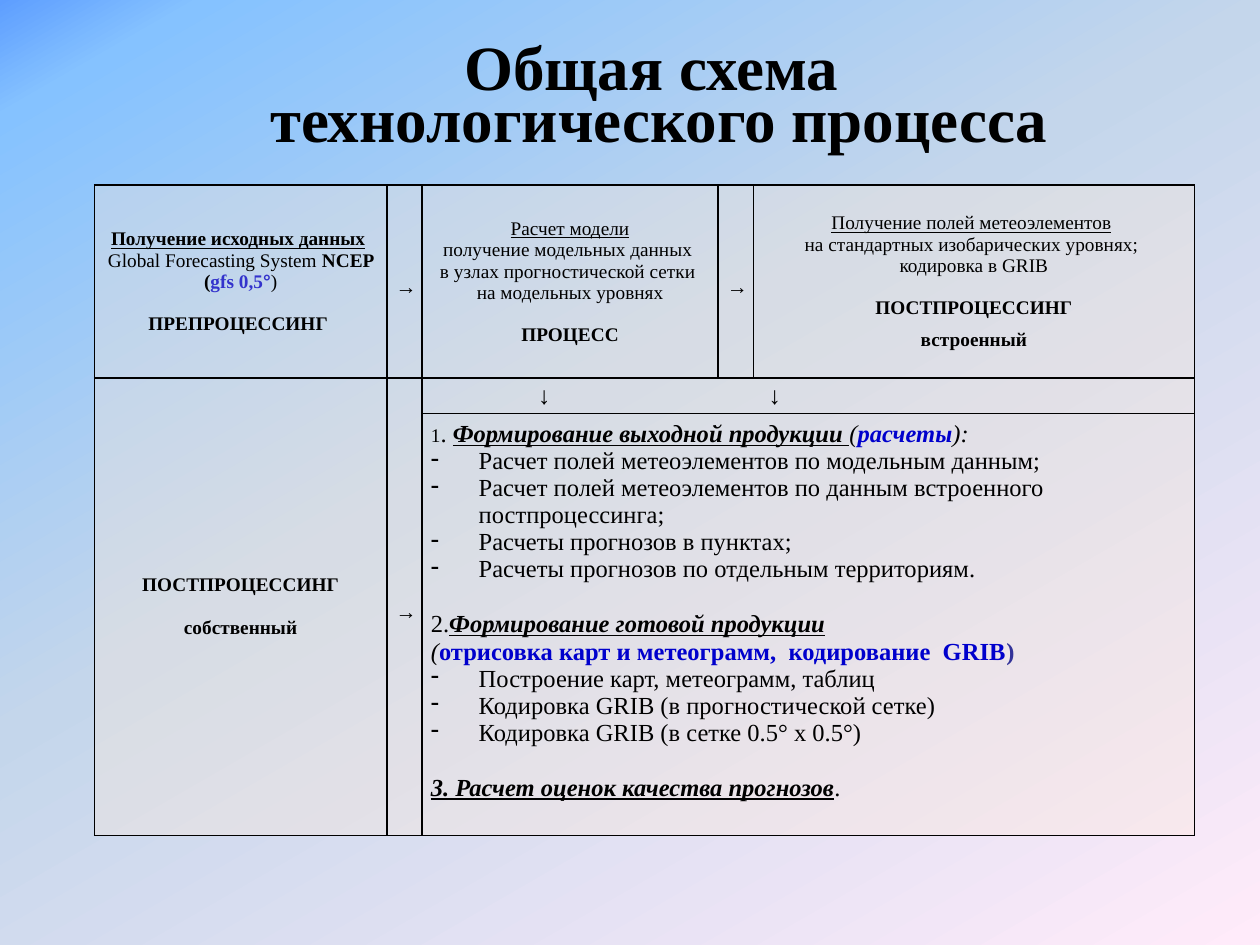
from copy import deepcopy
from lxml import etree
from pptx import Presentation
from pptx.dml.color import RGBColor
from pptx.enum.text import MSO_ANCHOR, PP_ALIGN
from pptx.oxml import parse_xml
from pptx.oxml.ns import nsdecls, qn
from pptx.util import Inches, Pt

MID = MSO_ANCHOR.MIDDLE
MIX = PP_ALIGN.CENTER
JUST = PP_ALIGN.JUSTIFY
LEFT = PP_ALIGN.LEFT
SERIF = "Times New Roman"
SANS = "Arial"
HUES = {"black": "000000", "blue": "0000CC", "soft": "3333CC", "navy": "333399", "cell": "FDEADA"}
STOPS = [(0, "5E9EFF"), (0.07, "85C2FF"), (0.44, "C4D6EB"), (1, "FFEBFA")]


def add_run(para, text, size, flags="", hue="black", face=SERIF):
    run = para.add_run()
    run.text = text
    look = {"size": Pt(size), "name": face, "bold": "b" in flags,
            "italic": "i" in flags, "underline": "u" in flags}
    for key, val in look.items():
        setattr(run.font, key, val)
    run.font.color.rgb = RGBColor.from_string(HUES[hue])


def add_text(frame, paras):
    for num, (form, runs) in enumerate(paras):
        para = frame.paragraphs[0] if num == 0 else frame.add_paragraph()
        props = para._p.get_or_add_pPr()
        form = dict(form)
        for key, val in form.pop("attrs", {}).items():
            props.set(key, str(val))
        for part in form.pop("parts", []):
            props.append(parse_xml(part))
        for key, val in form.items():
            setattr(para, key, val)
        for run in runs:
            add_run(para, *run)


deck = Presentation()
deck.slide_width, deck.slide_height = Inches(10), Inches(7.5)
slide = deck.slides.add_slide(deck.slide_layouts[5])

back = slide.background.fill
back.gradient()
back.gradient_angle = 300
marks = slide._element.find(".//" + qn("a:gsLst"))
for _ in range(2):
    marks.append(deepcopy(marks[0]))
for stop, (place, hue) in zip(back.gradient_stops, STOPS):
    stop.position = place
    stop.color.rgb = RGBColor.from_string(hue)

title = slide.shapes.title
spot = {"left": 0.59, "top": 0.34, "width": 8.9, "height": 0.95}
for key, val in spot.items():
    setattr(title, key, Inches(val))
title.text_frame.word_wrap = True
title.text_frame.vertical_anchor = MID
head = {"alignment": MIX, "line_spacing": Pt(30), "attrs": {"marL": 0, "indent": Inches(0.38)}}
add_text(title.text_frame, [
    (head, [("Общая схема ", 36, "b")]),
    (head, [("технологического процесса", 36, "b")]),
])

cols = [2.32, 0.28, 2.35, 0.28, 3.5]
rows = [1.53, 0.28, 3.35]
grid = slide.shapes.add_table(3, 5, Inches(0.75), Inches(1.47), Inches(sum(cols)), Inches(sum(rows))).table
for col, wide in zip(grid.columns, cols):
    col.width = Inches(wide)
for row, high in zip(grid.rows, rows):
    row.height = Inches(high)

for cell in grid.iter_cells():
    form = {"margin_left": Inches(0.07), "margin_right": Inches(0.07),
            "margin_top": 0, "margin_bottom": 0, "vertical_anchor": MID}
    for key, val in form.items():
        setattr(cell, key, val)
    cell.fill.solid()
    cell.fill.fore_color.rgb = RGBColor.from_string(HUES["cell"])
    props = cell._tc.tcPr
    tint = props.find(".//" + qn("a:srgbClr"))
    etree.SubElement(tint, qn("a:alpha"), val="34000")
    for num, side in enumerate("LRTB"):
        props.insert(num, parse_xml(
            f'<a:ln{side} {nsdecls("a")} w="12700"><a:solidFill>'
            f'<a:srgbClr val="{HUES["black"]}"/></a:solidFill></a:ln{side}>'))

for top, left, low, right in [(1, 0, 2, 0), (1, 1, 2, 1), (1, 2, 1, 4), (2, 2, 2, 4)]:
    grid.cell(top, left).merge(grid.cell(low, right))

mid = {"alignment": MIX}
gap = {"alignment": MIX, "space_before": Pt(11.5)}
near = {"alignment": MIX, "space_before": Pt(6)}
own = {"alignment": MIX, "space_before": Pt(6), "space_after": Pt(6)}
flat = {"alignment": LEFT}
part = {"alignment": LEFT, "space_before": Pt(16)}
dash = {"alignment": LEFT, "attrs": {"marL": Inches(0.38), "indent": -Inches(0.38)},
        "parts": [f'<a:buChar {nsdecls("a")} char="-"/>']}
tabs = "".join(f'<a:tab pos="{Inches(x)}" algn="ctr"/>' for x in (0.9, 2.73))
down = {"alignment": LEFT, "parts": [f'<a:tabLst {nsdecls("a")}>{tabs}</a:tabLst>']}
arrow = [({"alignment": JUST, "line_spacing": 1.5}, [("→", 12, "", "black", SANS)])]

calc = ["Расчет полей метеоэлементов по модельным данным;",
        "Расчет полей метеоэлементов по данным встроенного постпроцессинга;",
        "Расчеты прогнозов в пунктах;",
        "Расчеты прогнозов по отдельным территориям."]
draw = ["Построение карт, метеограмм, таблиц",
        "Кодировка GRIB (в прогностической сетке)",
        "Кодировка GRIB (в сетке 0.5° х 0.5°)"]

cells = {
    (0, 0): [
        (mid, [("Получение исходных данных", 11, "bu"), (" ", 11, "b")]),
        (mid, [("Global Forecasting System ", 11), ("NCEP (", 11, "b"), ("gfs 0,5", 11, "b", "soft"),
               ("°", 11, "b", "soft", SANS), (")", 11)]),
        (gap, [("ПРЕПРОЦЕССИНГ ", 11, "b")]),
    ],
    (0, 1): arrow,
    (0, 2): [
        (mid, [("Расчет модели", 11, "u")]),
        (mid, [("получение модельных данных ", 11)]),
        (mid, [("в узлах прогностической сетки ", 11)]),
        (mid, [("на модельных уровнях", 11)]),
        (gap, [("ПРОЦЕСС", 11, "b")]),
    ],
    (0, 3): arrow,
    (0, 4): [
        (mid, [("Получение полей метеоэлементов", 11, "u"), (" ", 11)]),
        (mid, [("на стандартных изобарических уровнях; ", 11)]),
        (mid, [("кодировка в GRIB", 11)]),
        (gap, [("ПОСТПРОЦЕССИНГ", 11, "b")]),
        (near, [("встроенный", 11, "b")]),
    ],
    (1, 0): [
        ({"alignment": MIX, "space_after": Pt(6)}, [("ПОСТПРОЦЕССИНГ", 11, "b")]),
        (own, [("собственный", 11, "b")]),
    ],
    (1, 1): arrow,
    (1, 2): [(down, [("\t↓\t↓", 14, "", "black", SANS)])],
    (2, 2): [
        (flat, [("1", 11), (". ", 14), ("Формирование выходной продукции", 14, "biu"), (" ", 14, "iu"),
                ("(", 14, "i"), ("расчеты", 14, "bi", "blue"), ("):", 14, "i")]),
        *[(dash, [(line, 14)]) for line in calc],
        (part, [("2.", 14), ("Формирование готовой продукции", 14, "biu")]),
        (flat, [("(", 14, "i"), ("отрисовка карт и метеограмм,  кодирование  GRIB", 14, "b", "blue"),
                (")", 14, "b", "navy")]),
        *[(dash, [(line, 14)]) for line in draw],
        (part, [("3. Расчет оценок качества прогнозов", 14, "biu"), (".", 14)]),
    ],
}
for (row, col), paras in cells.items():
    add_text(grid.cell(row, col).text_frame, paras)
grid.cell(2, 2).margin_bottom = Inches(0.21)

deck.save("out.pptx")
